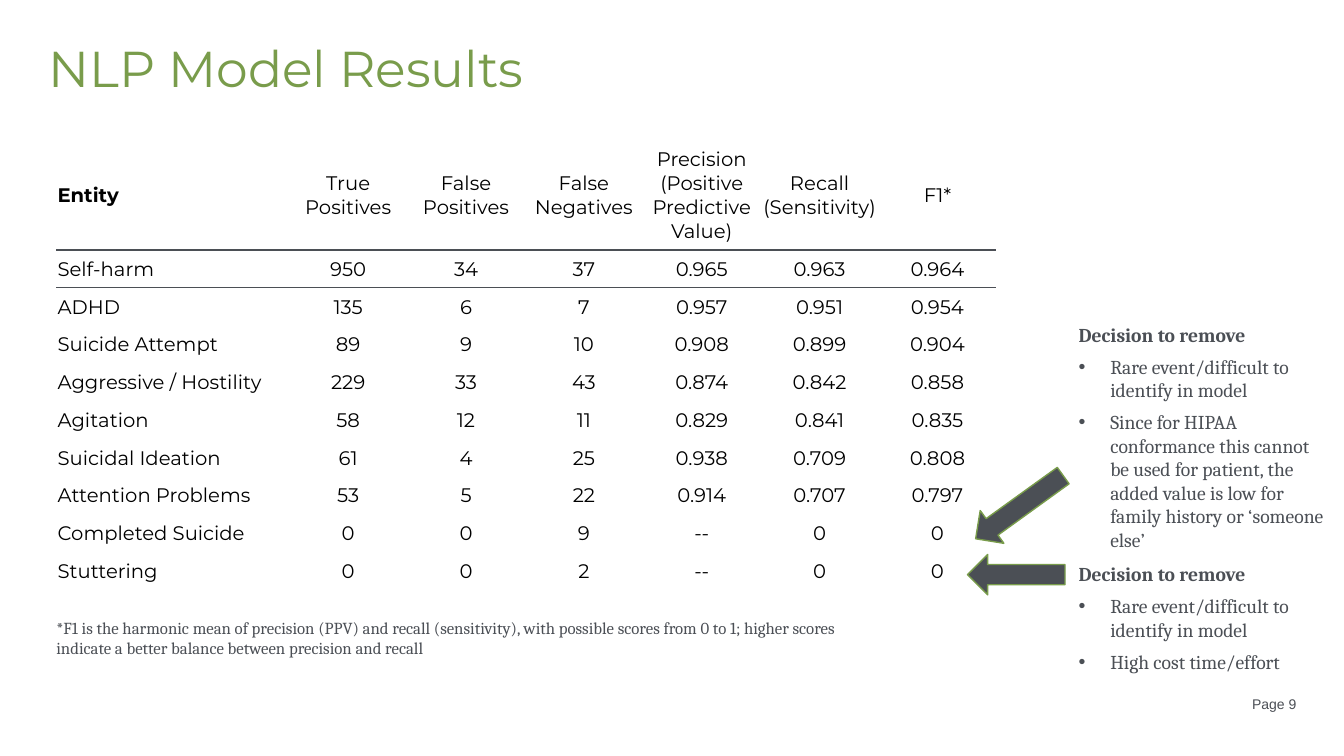
from lxml import etree
from pptx import Presentation
from pptx.dml.color import RGBColor
from pptx.enum.shapes import MSO_SHAPE
from pptx.enum.text import MSO_ANCHOR, MSO_AUTO_SIZE, PP_ALIGN
from pptx.oxml import parse_xml
from pptx.oxml.ns import nsdecls, qn
from pptx.util import Cm, Pt

RIGHT_ARROW = MSO_SHAPE.RIGHT_ARROW
MIDDLE, TOP = MSO_ANCHOR.MIDDLE, MSO_ANCHOR.TOP
NO_AUTOFIT = MSO_AUTO_SIZE.NONE
LEFT, CENTER, RIGHT, JUSTIFY = PP_ALIGN.LEFT, PP_ALIGN.CENTER, PP_ALIGN.RIGHT, PP_ALIGN.JUSTIFY

GREEN = RGBColor(0x79, 0x9C, 0x4B)
SLATE = RGBColor(0x4B, 0x4F, 0x55)
BLACK = RGBColor(0, 0, 0)
NO_TABLE_STYLE = "{2D5ABB26-0587-4C30-8999-92F81FD0307C}"

RESULTS = [
    ("Entity", "True Positives", "False Positives", "False Negatives",
     "Precision\n(Positive Predictive Value)", "Recall (Sensitivity)", "F1*"),
    ("Self-harm", "950", "34", "37", "0.965", "0.963", "0.964"),
    ("ADHD", "135", "6", "7", "0.957", "0.951", "0.954"),
    ("Suicide Attempt", "89", "9", "10", "0.908", "0.899", "0.904"),
    ("Aggressive / Hostility", "229", "33", "43", "0.874", "0.842", "0.858"),
    ("Agitation", "58", "12", "11", "0.829", "0.841", "0.835"),
    ("Suicidal Ideation", "61", "4", "25", "0.938", "0.709", "0.808"),
    ("Attention Problems", "53", "5", "22", "0.914", "0.707", "0.797"),
    ("Completed Suicide", "0", "0", "9", "--", "0", "0"),
    ("Stuttering", "0", "0", "2", "--", "0", "0"),
]
REMOVAL_HEADING = "Decision to remove"
RARE_EVENT = "Rare event/difficult to identify in model"
HIPAA_REASON = ("Since for HIPAA conformance this cannot be used for patient, the added value "
                "is low for family history or ‘someone else’")
FOOTNOTE = ("*F1 is the harmonic mean of precision (PPV) and recall (sensitivity), with possible "
            "scores from 0 to 1; higher scores indicate a better balance between precision and recall")


class ResultsSlide:
    heading_font = "Montserrat"
    body_font = "Cambria"
    page_font = "Arial"

    def __init__(self, presentation):
        self.slide = presentation.slides.add_slide(presentation.slide_layouts[3])

    def place(self, shape, left, top, width, height):
        shape.left, shape.top = Cm(left), Cm(top)
        shape.width, shape.height = Cm(width), Cm(height)

    def prepare(self, text_frame, anchor, inset=0.0):
        text_frame.word_wrap = True
        text_frame.auto_size = NO_AUTOFIT
        text_frame.vertical_anchor = anchor
        text_frame.margin_left = text_frame.margin_right = Cm(inset)
        text_frame.margin_top = text_frame.margin_bottom = Cm(inset / 2)

    def format(self, paragraph, font_name, size, color, bold=False, alignment=LEFT):
        paragraph.alignment = alignment
        for run in paragraph.runs:
            run.font.name = font_name
            run.font.size = Pt(size)
            run.font.bold = bold
            run.font.color.rgb = color

    def title(self, text):
        shape = self.slide.shapes.title
        self.place(shape, 0.97, 1.02, 31.93, 1.37)
        self.prepare(shape.text_frame, MIDDLE, 0.25)
        shape.text_frame.text = text
        self.format(shape.text_frame.paragraphs[0], self.heading_font, 36, GREEN)

    def text(self, text, box, font_name, size, alignment=LEFT, inset=0.0):
        shape = self.slide.shapes.add_textbox(*(Cm(length) for length in box))
        self.prepare(shape.text_frame, TOP, inset)
        shape.text_frame.text = text
        self.format(shape.text_frame.paragraphs[0], font_name, size, SLATE, alignment=alignment)

    def reasons(self, index, top, height, items):
        shape = self.slide.placeholders[index]
        self.place(shape, 27.18, top, 6.27, height)
        self.prepare(shape.text_frame, TOP)
        shape.text_frame.text = "\n".join([REMOVAL_HEADING, *items])
        for position, paragraph in enumerate(shape.text_frame.paragraphs):
            is_heading = position == 0
            properties = paragraph._p.get_or_add_pPr()
            indent = 0 if is_heading else Cm(0.8)
            properties.set("marL", str(indent))
            properties.set("indent", str(-indent))
            if is_heading:
                etree.SubElement(properties, qn("a:buNone"))
            else:
                etree.SubElement(properties, qn("a:buFont"), typeface="Arial")
                etree.SubElement(properties, qn("a:buChar"), char="•")
            paragraph.line_spacing = Pt(16.8)
            paragraph.space_before = Pt(0)
            paragraph.space_after = Pt(6)
            self.format(paragraph, self.body_font, 14, SLATE, bold=is_heading)

    def arrow(self, left, top, width, rotation):
        shape = self.slide.shapes.add_shape(RIGHT_ARROW, Cm(left), Cm(top), Cm(width), Cm(1.02))
        shape.rotation = rotation
        shape.shadow.inherit = False
        shape.fill.solid()
        shape.fill.fore_color.rgb = SLATE
        shape.line.color.rgb = GREEN
        shape.line.width = Pt(1)

    def border(self, cell, side):
        line = parse_xml(
            f'<a:{side} {nsdecls("a")} w="{Pt(1)}"><a:solidFill>'
            f'<a:srgbClr val="{SLATE}"/></a:solidFill></a:{side}>')
        cell._tc.get_or_add_tcPr().insert(0, line)

    def table(self, rows):
        frame = self.slide.shapes.add_table(
            len(rows), len(rows[0]), Cm(1.42), Cm(3.51), Cm(23.69), Cm(11.34))
        table = frame.table
        table.first_row = table.horz_banding = False
        table._tbl.tblPr.find(qn("a:tableStyleId")).text = NO_TABLE_STYLE
        for index, column in enumerate(table.columns):
            column.width = Cm(2.97 if index else 5.87)
        for index, row in enumerate(table.rows):
            row.height = Cm(0.95 if index else 2.79)
            for column_index, value in enumerate(rows[index]):
                self.cell(row.cells[column_index], value, index, column_index)

    def cell(self, cell, value, row_index, column_index):
        cell.text = value
        cell.fill.background()
        cell.vertical_anchor = MIDDLE
        cell.margin_left = cell.margin_right = cell.margin_top = Cm(0.03)
        cell.margin_bottom = 0
        if row_index < 2:
            self.border(cell, "lnT" if row_index else "lnB")
        for paragraph in cell.text_frame.paragraphs:
            self.format(paragraph, self.heading_font, 14, BLACK,
                        bold=row_index == column_index == 0,
                        alignment=CENTER if column_index else JUSTIFY)


def main():
    presentation = Presentation()
    presentation.slide_width, presentation.slide_height = Cm(33.87), Cm(19.05)
    results = ResultsSlide(presentation)
    results.text("Page 9", (22.28, 17.4, 10.64, 0.69), results.page_font, 10, RIGHT, 0.25)
    results.title("NLP Model Results")
    results.arrow(24.38, 13.97, 2.46, 180)
    results.reasons(2, 14.17, 2.82, [RARE_EVENT, "High cost time/effort"])
    results.arrow(24.33, 12.27, 2.72, 144.2)
    results.reasons(1, 8.13, 5.84, [RARE_EVENT, HIPAA_REASON])
    results.text(FOOTNOTE, (1.42, 15.57, 19.81, 1.02), results.body_font, 12)
    results.table(RESULTS)
    presentation.save("out.pptx")


if __name__ == "__main__":
    main()
